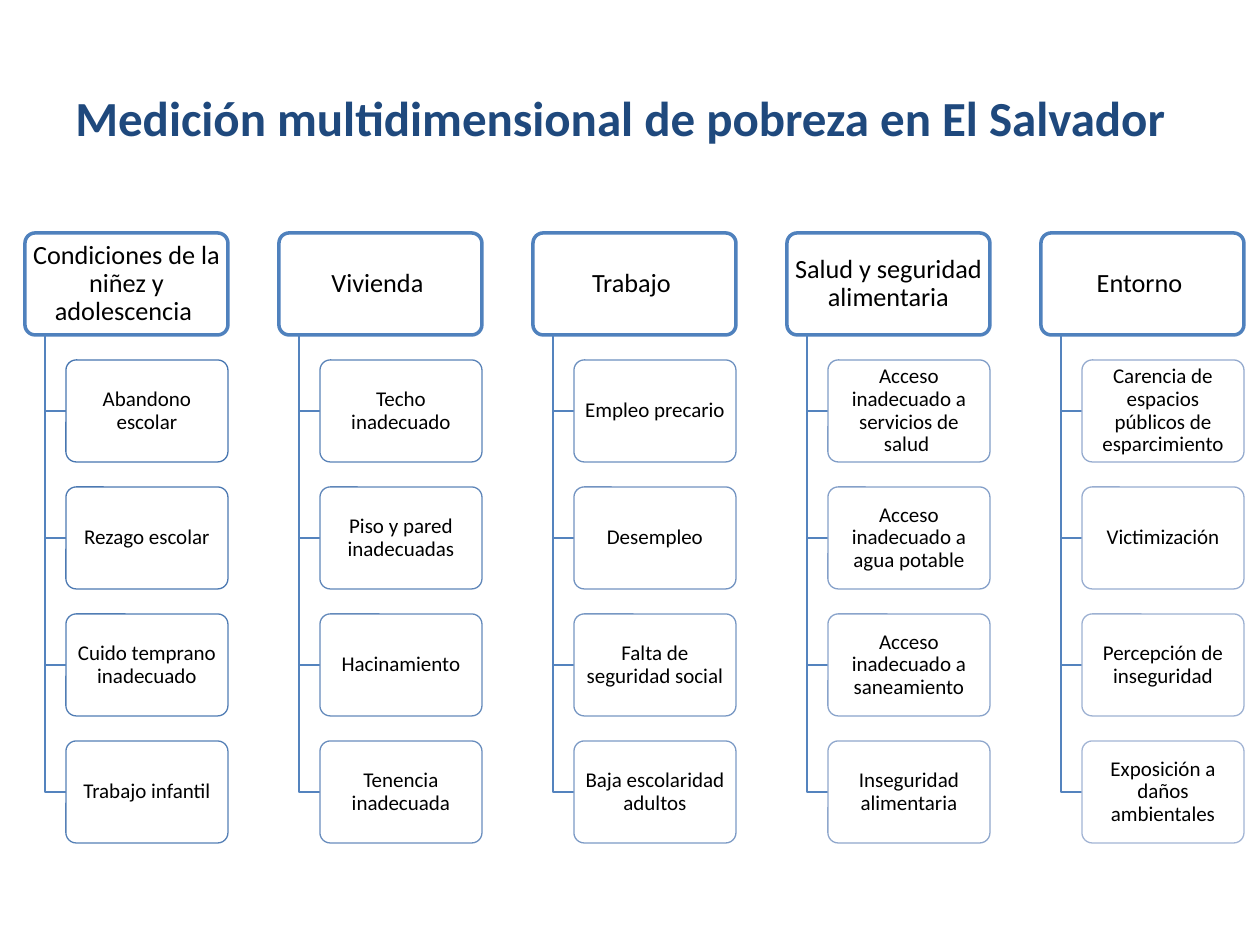
import dataclasses

import pptx
import pptx.dml.color
import pptx.enum.shapes
import pptx.enum.text
import pptx.util

SCALE = 914400 / 126  # EMU per px


@dataclasses.dataclass
class Theme:
    font: str = "Calibri"
    title_color: str = "1F497D"
    text_color: str = "000000"
    box_fill: str = "FFFFFF"
    header_line: str = "4F81BD"
    branch_line: str = "5483BE"
    first_line: tuple = (0x47, 0x76, 0xB0)
    last_line: tuple = (0xA2, 0xB4, 0xD4)
    title_size: int = 28
    header_size: int = 15
    item_size: int = 12


THEME = Theme()
RGB = pptx.dml.color.RGBColor

DIMENSIONS = {
    "Condiciones de la niñez y adolescencia ": [
        "Abandono escolar", "Rezago escolar",
        "Cuido temprano inadecuado", "Trabajo infantil"],
    "Vivienda ": [
        "Techo inadecuado", "Piso y pared inadecuadas",
        "Hacinamiento", "Tenencia inadecuada"],
    "Trabajo ": [
        "Empleo precario", "Desempleo",
        "Falta de seguridad social", "Baja escolaridad adultos"],
    "Salud y seguridad alimentaria": [
        "Acceso inadecuado a servicios de salud ", "Acceso inadecuado a agua potable",
        "Acceso inadecuado a saneamiento", "Inseguridad alimentaria"],
    "Entorno ": [
        "Carencia de espacios públicos de esparcimiento", "Victimización",
        "Percepción de inseguridad", "Exposición a daños ambientales"],
}

LEFT, TOP = 25, 233
COLUMN_PITCH, ROW_PITCH = 254, 127
HEADER_WIDTH, BOX_HEIGHT = 203, 102
TRUNK_OFFSET, ITEM_OFFSET = 20, 41
ITEM_WIDTH = HEADER_WIDTH - ITEM_OFFSET


def px(length):
    return round(length * SCALE)


def add_box(left, top, width, text, size, line_color, line_width):
    """Add a rounded box with centred text."""
    box = page.shapes.add_shape(
        pptx.enum.shapes.MSO_SHAPE.ROUNDED_RECTANGLE,
        px(left), px(top), px(width), px(BOX_HEIGHT))
    box.adjustments[0] = 0.1
    box.shadow.inherit = False
    box.fill.solid()
    box.fill.fore_color.rgb = RGB.from_string(THEME.box_fill)
    box.line.color.rgb = line_color
    box.line.width = pptx.util.Pt(line_width)
    frame = box.text_frame
    frame.word_wrap = True
    frame.vertical_anchor = pptx.enum.text.MSO_ANCHOR.MIDDLE
    frame.margin_left = frame.margin_right = px(4)
    frame.margin_top = frame.margin_bottom = px(2)
    frame.text = text
    para = frame.paragraphs[0]
    para.alignment = pptx.enum.text.PP_ALIGN.CENTER
    para.line_spacing = 0.9
    span = para.runs[0]
    span.font.name = THEME.font
    span.font.size = pptx.util.Pt(size)
    span.font.color.rgb = RGB.from_string(THEME.text_color)


deck = pptx.Presentation()
deck.slide_width = px(1260)
deck.slide_height = px(945)
page = deck.slides.add_slide(deck.slide_layouts[6])

title = page.shapes.add_textbox(px(63), px(38), px(1134), px(157))
title.text_frame.word_wrap = True
title.text_frame.vertical_anchor = pptx.enum.text.MSO_ANCHOR.MIDDLE
title.text_frame.text = "Medición multidimensional de pobreza en El Salvador"
title_font = title.text_frame.paragraphs[0].runs[0].font
title_font.name = THEME.font
title_font.size = pptx.util.Pt(THEME.title_size)
title_font.bold = True
title_font.color.rgb = RGB.from_string(THEME.title_color)

item_count = sum(len(items) for items in DIMENSIONS.values())
item_index = 0
for column, (dimension, items) in enumerate(DIMENSIONS.items()):
    left = LEFT + column * COLUMN_PITCH
    add_box(left, TOP, HEADER_WIDTH, dimension, THEME.header_size,
            RGB.from_string(THEME.header_line), 2)
    for row, item in enumerate(items, start=1):
        top = TOP + row * ROW_PITCH
        middle = top + BOX_HEIGHT // 2
        trunk = left + TRUNK_OFFSET
        outline = page.shapes.build_freeform(trunk, TOP + BOX_HEIGHT, scale=SCALE)
        outline.add_line_segments(
            [(trunk, middle), (left + ITEM_OFFSET, middle)], close=False)
        branch = outline.convert_to_shape()
        branch.shadow.inherit = False
        branch.fill.background()
        branch.line.color.rgb = RGB.from_string(THEME.branch_line)
        branch.line.width = pptx.util.Pt(0.75)

        # Item outlines fade evenly from the first item to the last
        progress = item_index / (item_count - 1)
        fade = [round(first + (last - first) * progress)
                for first, last in zip(THEME.first_line, THEME.last_line)]
        add_box(left + ITEM_OFFSET, top, ITEM_WIDTH, item, THEME.item_size,
                RGB(*fade), 0.75)
        item_index += 1

deck.save("out.pptx")
